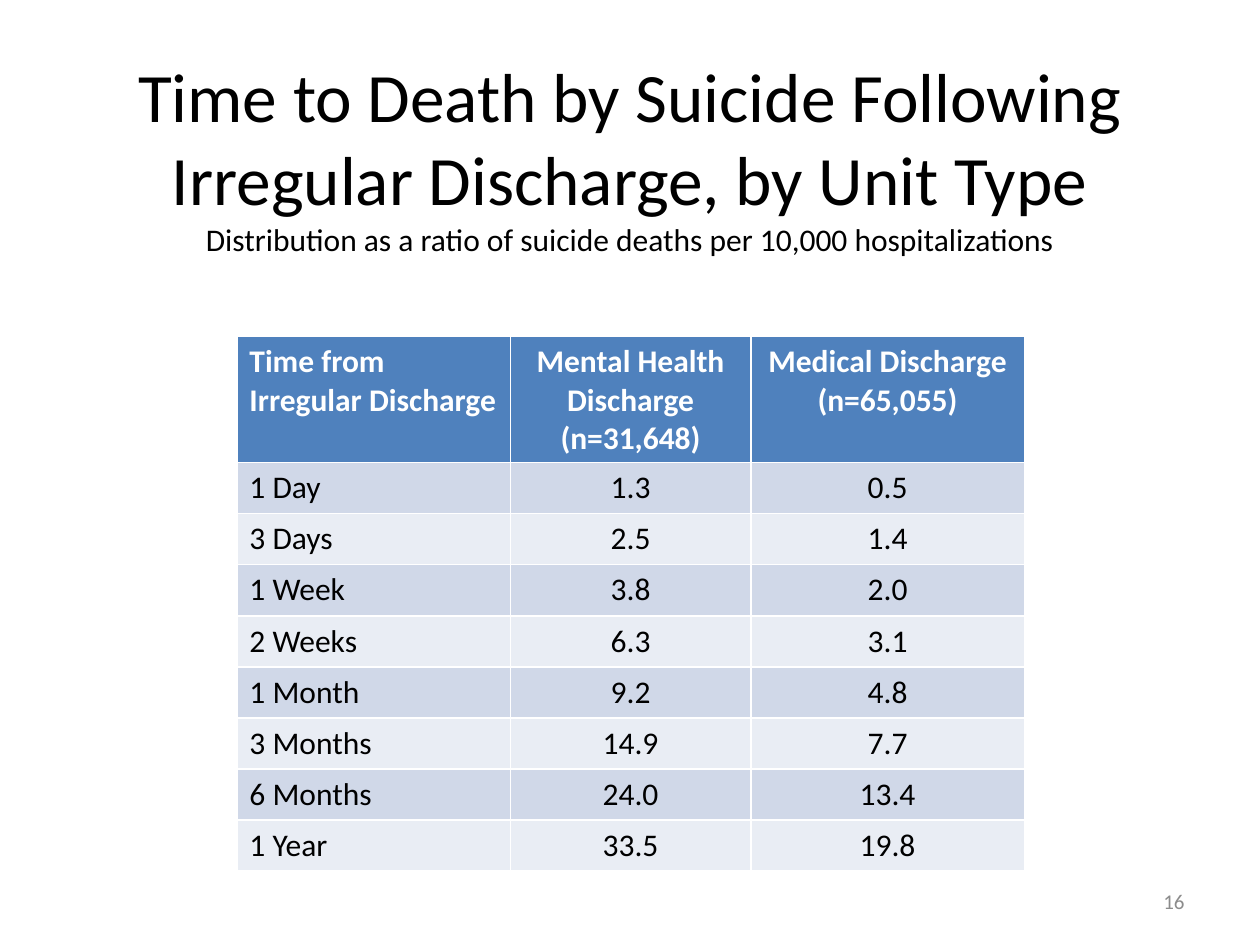
import pptx
import pptx.util
import pptx.dml.color
import pptx.enum.text

TITLE = [
    ("Time to Death by Suicide Following Irregular Discharge, by Unit Type", 39.6),
    ("Distribution as a ratio of suicide deaths per 10,000 hospitalizations", 18),
]
PAGE = "16"
HEAD = [
    ("Time from", "Irregular Discharge"),
    ("Mental Health Discharge", "(n=31,648)"),
    ("Medical Discharge", "(n=65,055)"),
]
RATES = [
    ("1 Day", "1.3", "0.5"),
    ("3 Days", "2.5", "1.4"),
    ("1 Week", "3.8", "2.0"),
    ("2 Weeks", "6.3", "3.1"),
    ("1 Month", "9.2", "4.8"),
    ("3 Months", "14.9", "7.7"),
    ("6 Months", "24.0", "13.4"),
    ("1 Year", "33.5", "19.8"),
]
WIDTHS = [2.17, 1.91, 2.17]
BANDS = ["D0D8E8", "E9EDF4"]
BLUE, WHITE, BLACK, GREY = "4F81BD", "FFFFFF", "000000", "8C8C8C"

Inches = pptx.util.Inches
Align = pptx.enum.text.PP_ALIGN


def paint(target, color):
    target.rgb = pptx.dml.color.RGBColor.from_string(color)


def add_run(para, text, size, color, bold=False):
    run = para.add_run()
    run.text = text
    run.font.name = "Calibri"
    run.font.size = pptx.util.Pt(size)
    run.font.bold = bold
    paint(run.font.color, color)


def add_box(slide, place, align):
    frame = slide.shapes.add_textbox(*map(Inches, place)).text_frame
    frame.word_wrap = True
    frame.vertical_anchor = pptx.enum.text.MSO_ANCHOR.MIDDLE
    para = frame.paragraphs[0]
    para.alignment = align
    return para


def fill_cell(cell, lines, align, fill, color, bold):
    cell.fill.solid()
    paint(cell.fill.fore_color, fill)
    frame = cell.text_frame
    for num, line in enumerate(lines):
        para = frame.add_paragraph() if num else frame.paragraphs[0]
        para.alignment = align
        add_run(para, line, 18, color, bold)


def add_rates(slide):
    rows = [HEAD] + [[(text,) for text in row] for row in RATES]
    place = map(Inches, (1.88, 2.67, sum(WIDTHS), 3.65))
    table = slide.shapes.add_table(len(rows), len(WIDTHS), *place).table
    for col, width in zip(table.columns, WIDTHS):
        col.width = Inches(width)
    for r, row in enumerate(rows):
        head = r == 0
        fill = BLUE if head else BANDS[(r - 1) % 2]
        color = WHITE if head else BLACK
        for c, lines in enumerate(row):
            align = Align.CENTER if c else Align.LEFT
            fill_cell(table.cell(r, c), lines, align, fill, color, head)


def main():
    deck = pptx.Presentation()
    deck.slide_width, deck.slide_height = Inches(10), Inches(7.5)
    slide = deck.slides.add_slide(deck.slide_layouts[6])
    title = add_box(slide, (0.5, 0.3, 9, 1.87), Align.CENTER)
    for num, (text, size) in enumerate(TITLE):
        if num:
            title.add_line_break()
        add_run(title, text, size, BLACK)
    add_rates(slide)
    page = add_box(slide, (7.17, 6.95, 2.33, 0.4), Align.RIGHT)
    add_run(page, PAGE, 12, GREY)
    deck.save("out.pptx")


if __name__ == "__main__":
    main()
